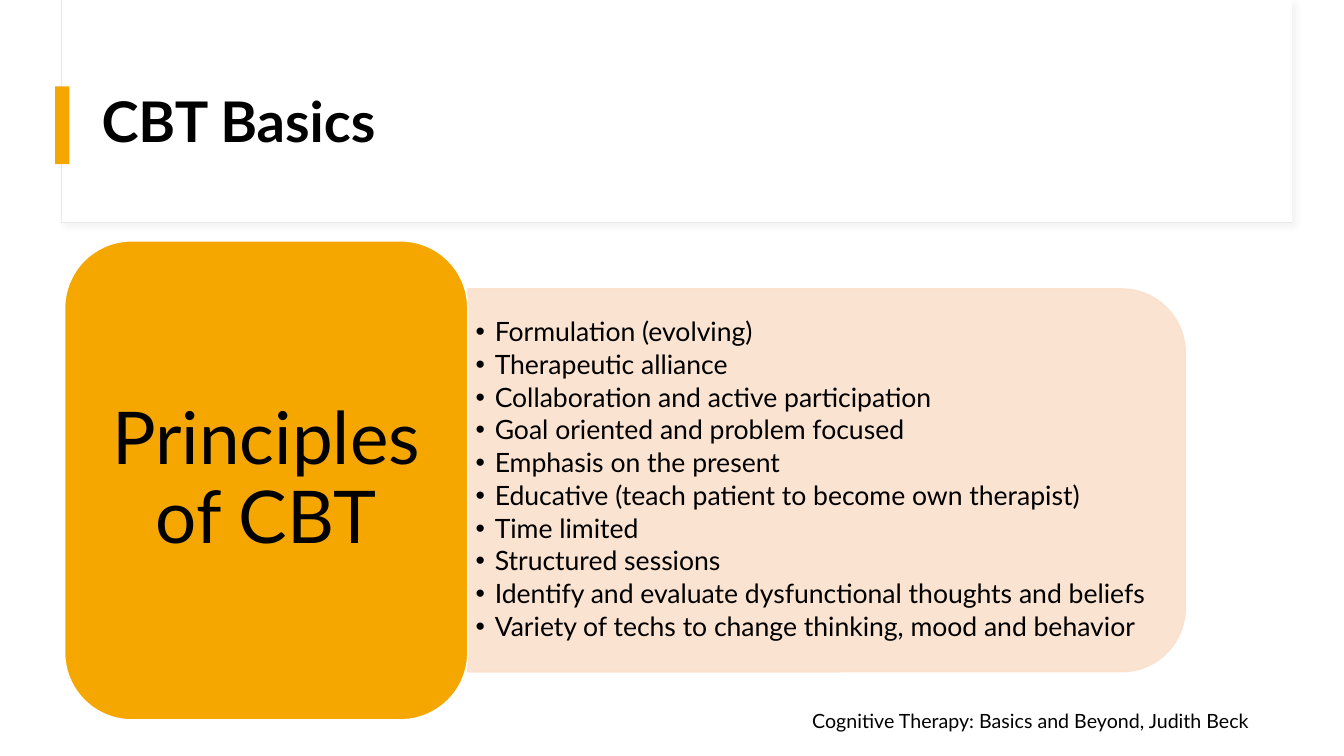
from lxml import etree
from pptx import Presentation
from pptx.dml.color import RGBColor
from pptx.enum.shapes import MSO_SHAPE as SHAPE
from pptx.enum.text import MSO_ANCHOR as ANCHOR, PP_ALIGN as ALIGN
from pptx.oxml import parse_xml
from pptx.oxml.ns import nsdecls, qn
from pptx.util import Cm, Pt

FONT = "Lato"
BLACK, WHITE, GOLD, PEACH = "000000", "FFFFFF", "F5A700", "FBE1CC"
PRINCIPLES = [
    "Formulation (evolving)",
    "Therapeutic alliance",
    "Collaboration and active participation",
    "Goal oriented and problem focused",
    "Emphasis on the present",
    "Educative (teach patient to become own therapist)",
    "Time limited",
    "Structured sessions",
    "Identify and evaluate dysfunctional thoughts and beliefs",
    "Variety of techs to change thinking, mood and behavior",
]


def rgb(value):
    """Turn a hex string into a colour."""
    return RGBColor.from_string(value)


def set_alpha(fill, percent):
    """Make a solid fill partly transparent."""
    clr = fill._xPr.find(qn("a:solidFill"))[0]
    etree.SubElement(clr, qn("a:alpha"), val=str(percent * 1000))


def add_block(s, kind, box, fill, line=None, weight=1):
    """Add a flat filled shape in a box given in centimetres."""
    sp = s.shapes.add_shape(kind, *map(Cm, box))
    sp.shadow.inherit = False
    sp.fill.solid()
    sp.fill.fore_color.rgb = rgb(fill)
    if line:
        sp.line.color.rgb = rgb(line)
        sp.line.width = Pt(weight)
    else:
        sp.line.fill.background()
    return sp


def add_frame(s, box, anchor=ANCHOR.TOP, wrap=True):
    """Add a text box and return its text frame."""
    tf = s.shapes.add_textbox(*map(Cm, box)).text_frame
    tf.word_wrap = wrap
    tf.vertical_anchor = anchor
    return tf


def set_margins(tf, side, top):
    """Set equal side margins and equal top and bottom margins."""
    tf.margin_left = tf.margin_right = Cm(side)
    tf.margin_top = tf.margin_bottom = Cm(top)


def add_run(p, text, size, bold=False):
    """Add a black run to a paragraph."""
    r = p.add_run()
    r.text = text
    r.font.name = FONT
    r.font.size = Pt(size)
    r.font.bold = bold
    r.font.color.rgb = rgb(BLACK)


def add_bullet(p, indent):
    """Give a paragraph a hanging bullet."""
    pPr = p._p.get_or_add_pPr()
    pPr.set("marL", str(Cm(indent)))
    pPr.set("indent", str(-Cm(indent)))
    etree.SubElement(pPr, qn("a:buFont"), typeface="Arial")
    etree.SubElement(pPr, qn("a:buChar"), char="•")


def add_header(s, left, top, width, height):
    """Draw the title panel with its accent bar."""
    panel = add_block(s, SHAPE.RECTANGLE, (left, top, width, height), WHITE, "E9E9E9", 0.75)
    panel._element.spPr.find(qn("a:effectLst")).append(parse_xml(
        f'<a:outerShdw {nsdecls("a")} blurRad="{Pt(4)}" dist="{Pt(3)}" dir="2700000">'
        '<a:srgbClr val="D9D9D9"><a:alpha val="30000"/></a:srgbClr></a:outerShdw>'))
    add_block(s, SHAPE.RECTANGLE, (left + 0.02, top, width - 0.02, height - 0.02), WHITE)
    add_block(s, SHAPE.RECTANGLE, (left - 0.16, top + 2.18, 0.36, 1.96), GOLD)
    tf = add_frame(s, (left + 0.76, top + 1.5, 28.24, 3.28), ANCHOR.MIDDLE)
    p = tf.paragraphs[0]
    p.line_spacing = 0.9
    add_run(p, "CBT Basics", 40, bold=True)


def add_principles(s, left, top, width, height):
    """Draw the gold heading card and the bulleted panel beside it."""
    card_w, panel_h = 10.16, 9.65
    panel_x, panel_w = left + card_w, width - card_w
    mid_x, mid_y = panel_x + panel_w / 2, top + height / 2
    panel = add_block(s, SHAPE.ROUND_2_SAME_RECTANGLE,
                      (mid_x - panel_h / 2, mid_y - panel_w / 2, panel_h, panel_w), PEACH, PEACH)
    panel.rotation = 90
    set_alpha(panel.fill, 90)
    set_alpha(panel.line.fill, 90)

    tf = add_frame(s, (panel_x, mid_y - 4.36, panel_w - 0.48, 8.72), ANCHOR.MIDDLE)
    set_margins(tf, 0.2, 0.1)
    for i, principle in enumerate(PRINCIPLES):
        p = tf.add_paragraph() if i else tf.paragraphs[0]
        p.line_spacing = 0.9
        p.space_after = Pt(2.85)
        add_bullet(p, 0.48)
        add_run(p, principle, 19)

    card = add_block(s, SHAPE.ROUNDED_RECTANGLE, (left, top, card_w, height), GOLD, WHITE)
    tf = card.text_frame
    tf.word_wrap = True
    tf.vertical_anchor = ANCHOR.MIDDLE
    set_margins(tf, 0.56, 0.28)
    p = tf.paragraphs[0]
    p.alignment = ALIGN.CENTER
    p.line_spacing = 0.9
    add_run(p, "Principles of CBT", 52)


def add_citation(s, left, top, width, height):
    """Write the book reference at the foot of the slide."""
    tf = add_frame(s, (left, top, width, height), wrap=False)
    add_run(tf.paragraphs[0], "Cognitive Therapy: Basics and Beyond, Judith Beck", 14)


def main():
    """Build and save the slide."""
    prs = Presentation()
    prs.slide_width, prs.slide_height = Cm(33.87), Cm(19.05)
    s = prs.slides.add_slide(prs.slide_layouts[6])
    add_header(s, 1.55, 0, 31.01, 5.61)
    add_principles(s, 1.63, 6.07, 28.24, 12.07)
    add_citation(s, 20.22, 17.75, 11.86, 0.86)
    prs.save("out.pptx")


if __name__ == "__main__":
    main()
